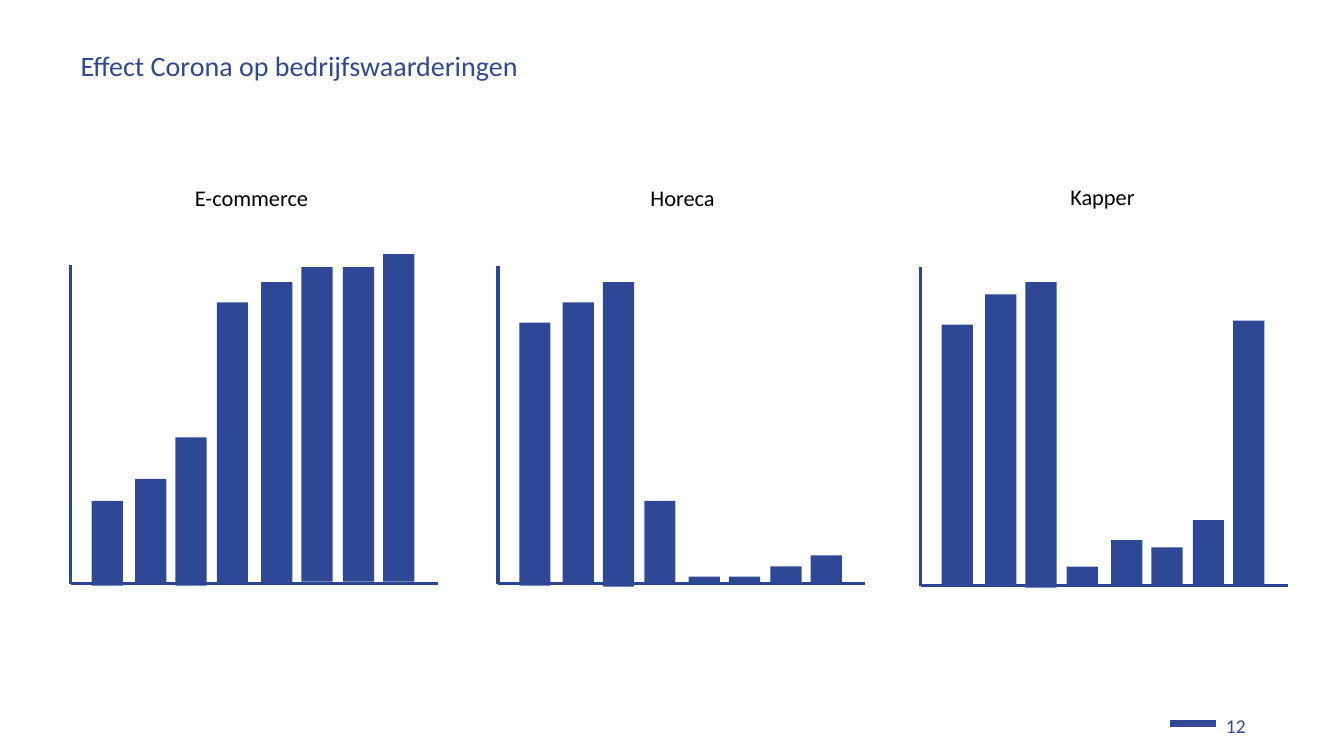
from dataclasses import dataclass

from lxml import etree
from pptx import Presentation
from pptx.dml.color import RGBColor
from pptx.enum.shapes import MSO_CONNECTOR, MSO_SHAPE
from pptx.enum.text import PP_ALIGN
from pptx.oxml.ns import qn
from pptx.slide import Slide
from pptx.util import Inches, Pt

LINE = MSO_CONNECTOR.STRAIGHT
RECT = MSO_SHAPE.RECTANGLE
LEFT, MID, FULL = PP_ALIGN.LEFT, PP_ALIGN.CENTER, PP_ALIGN.JUSTIFY

FONT = "Calibri"
BLUE, DARK, FILL, BLACK = "304895", "284694", "2F4895", "000000"

BAR_W = 0.31
AXIS_W = 3.64
STEPS = (0.21, 0.64, 1.04, 1.45, 1.89, 2.29, 2.7, 3.1)


@dataclass
class Label:
    text: str
    left: float
    top: float
    width: float
    height: float
    size: int
    color: str
    align: PP_ALIGN
    inset: bool = True


@dataclass
class Graph:
    """One sector: axis corner, axis top and a (top, height) pair per bar."""
    left: float
    top: float
    base: float
    bars: tuple[tuple[float, float], ...]


LABELS = (
    Label("Effect Corona op bedrijfswaarderingen", 0.8, 0.48, 12.21, 0.34,
          20, BLUE, FULL, False),
    Label("E-commerce ", 1.55, 1.78, 1.94, 0.37, 16, BLACK, MID),
    Label("Horeca", 5.8, 1.78, 1.94, 0.37, 16, BLACK, MID),
    Label("Kapper ", 9.99, 1.77, 1.94, 0.37, 16, BLACK, MID),
    Label("12", 12.06, 7.03, 0.6, 0.34, 14, FILL, LEFT),
)

GRAPHS = (
    Graph(0.7, 2.63, 5.79, (
        (4.97, 0.84), (4.75, 1.04), (4.34, 1.47), (3, 2.78),
        (2.8, 2.98), (2.65, 3.12), (2.65, 3.12), (2.52, 3.25))),
    Graph(4.94, 2.64, 5.79, (
        (3.2, 2.61), (3, 2.8), (2.8, 3.02), (4.97, 0.81),
        (5.72, 0.06), (5.72, 0.06), (5.62, 0.16), (5.51, 0.27))),
    Graph(9.13, 2.65, 5.81, (
        (3.22, 2.59), (2.92, 2.89), (2.8, 3.03), (5.62, 0.18),
        (5.36, 0.44), (5.43, 0.37), (5.16, 0.64), (3.18, 2.62))),
)


def rgb(code: str) -> RGBColor:
    return RGBColor.from_string(code)


def add_label(slide: Slide, label: Label) -> None:
    box = slide.shapes.add_textbox(Inches(label.left), Inches(label.top),
                                   Inches(label.width), Inches(label.height))
    frame = box.text_frame
    frame.word_wrap = True
    if not label.inset:
        frame.margin_left = frame.margin_right = Inches(0)
        frame.margin_top = frame.margin_bottom = Inches(0)
    frame.text = label.text
    para = frame.paragraphs[0]
    para.alignment = label.align
    font = para.runs[0].font
    font.name, font.size = FONT, Pt(label.size)
    font.color.rgb = rgb(label.color)


def add_line(slide: Slide, x1: float, y1: float, x2: float, y2: float,
             color: str, width: float) -> None:
    line = slide.shapes.add_connector(LINE, Inches(x1), Inches(y1),
                                      Inches(x2), Inches(y2))
    line.line.color.rgb = rgb(color)
    line.line.width = Pt(width)
    etree.SubElement(line._element.spPr, qn("a:effectLst"))


def add_bar(slide: Slide, left: float, top: float, height: float) -> None:
    bar = slide.shapes.add_shape(RECT, Inches(left), Inches(top),
                                 Inches(BAR_W), Inches(height))
    bar.shadow.inherit = False
    bar.fill.solid()
    bar.fill.fore_color.rgb = rgb(FILL)
    bar.line.fill.background()


def add_graph(slide: Slide, graph: Graph) -> None:
    left, base = graph.left, graph.base
    add_line(slide, left, graph.top, left, base, DARK, 2.5)
    add_line(slide, left, base, left + AXIS_W, base, DARK, 2.5)
    for step, (top, height) in zip(STEPS, graph.bars):
        add_bar(slide, left + step, top, height)


def main() -> None:
    deck = Presentation()
    deck.slide_width, deck.slide_height = Inches(13.33), Inches(7.5)
    slide = deck.slides.add_slide(deck.slide_layouts[6])
    add_line(slide, 11.6, 7.18, 12.06, 7.18, BLUE, 5.15)
    for label in LABELS:
        add_label(slide, label)
    for graph in GRAPHS:
        add_graph(slide, graph)
    deck.save("out.pptx")


if __name__ == "__main__":
    main()
